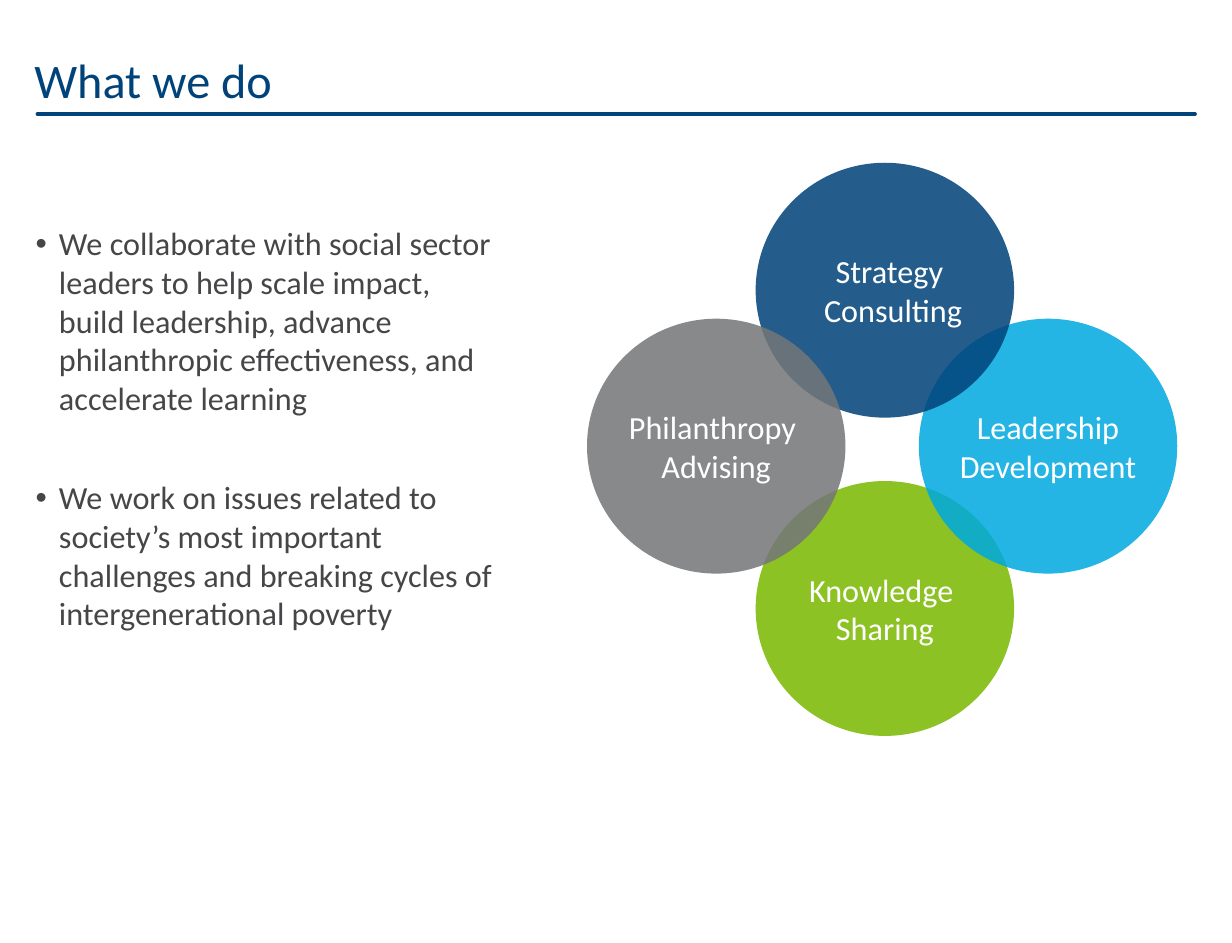
from dataclasses import dataclass

from lxml import etree
from pptx import Presentation
from pptx import util as u
from pptx.dml.color import RGBColor
from pptx.enum import shapes, text
from pptx.oxml.ns import qn

FONT = "Calibri"
NAVY = "00437A"
BODY_GREY = "464547"
WHITE = "FFFFFF"
CIRCLE_WIDTH, CIRCLE_HEIGHT = 5.67, 5.59


@dataclass
class Circle:
    left: float
    top: float
    color: str
    lines: list[str]
    margin: float = 0


CIRCLES = [
    Circle(16.58, 10.55, "7AB800", ["Knowledge ", "Sharing"]),
    Circle(20.16, 6.99, "00A9E0", ["Leadership", "Development"]),
    Circle(16.58, 3.57, NAVY, ["Strategy ", "Consulting"], 0.36),
    Circle(12.88, 6.99, "747678", ["Philanthropy ", "Advising"]),
]

BULLETS = [
    "We collaborate with social sector leaders to help scale impact, build leadership, "
    "advance philanthropic effectiveness, and accelerate learning",
    "We work on issues related to society’s most important challenges and breaking "
    "cycles of intergenerational poverty",
]


def rgb(value: str) -> RGBColor:
    return RGBColor.from_string(value)


def write(tf, lines: list[str], *, size: float, color: str, align=text.PP_ALIGN.LEFT,
          spacing: float = 1, gap: float = 0, margin: float = 0, indent: float = 0,
          bullet: str = "") -> None:
    for i, line in enumerate(lines):
        p = tf.paragraphs[0] if i == 0 else tf.add_paragraph()
        p.alignment = align
        p.line_spacing = spacing
        p.space_before = u.Pt(gap if i else 0)
        p_pr = p._p.get_or_add_pPr()
        p_pr.set("marL", str(u.Cm(margin)))
        p_pr.set("indent", str(u.Cm(indent)))
        if bullet:
            etree.SubElement(p_pr, qn("a:buFont"), typeface="Arial")
            etree.SubElement(p_pr, qn("a:buChar"), char=bullet)
        r = p.add_run()
        r.text = line
        r.font.name = FONT
        r.font.size = u.Pt(size)
        r.font.color.rgb = rgb(color)


def place(sp, left: float, top: float, width: float, height: float, anchor):
    sp.left, sp.top, sp.width, sp.height = map(u.Cm, (left, top, width, height))
    tf = sp.text_frame
    tf.auto_size = text.MSO_AUTO_SIZE.NONE
    tf.word_wrap = True
    tf.vertical_anchor = anchor
    return tf


def add_rule(s) -> None:
    rule = s.shapes.add_connector(shapes.MSO_CONNECTOR.STRAIGHT,
                                  u.Cm(0.82), u.Cm(2.5), u.Cm(26.22), u.Cm(2.5))
    rule.line.color.rgb = rgb(NAVY)
    rule.line.width = u.Pt(2.25)
    rule.line._get_or_add_ln().set("cap", "rnd")
    etree.SubElement(rule._element.spPr, qn("a:effectLst"))


def add_circle(s, circle: Circle) -> None:
    sp = s.shapes.add_shape(shapes.MSO_SHAPE.OVAL, u.Cm(circle.left), u.Cm(circle.top),
                            u.Cm(CIRCLE_WIDTH), u.Cm(CIRCLE_HEIGHT))
    sp.shadow.inherit = False
    sp.line.fill.background()
    sp.fill.solid()
    sp.fill.fore_color.rgb = rgb(circle.color)
    srgb = sp._element.spPr.find(qn("a:solidFill")).find(qn("a:srgbClr"))
    etree.SubElement(srgb, qn("a:alpha"), val="86000")
    tf = sp.text_frame
    tf.word_wrap = False
    tf.vertical_anchor = text.MSO_ANCHOR.MIDDLE
    write(tf, circle.lines, size=20, color=WHITE, align=text.PP_ALIGN.CENTER,
          margin=circle.margin)


def main() -> None:
    prs = Presentation()
    prs.slide_width, prs.slide_height = u.Cm(27.03), u.Cm(20.68)
    s = prs.slides.add_slide(prs.slide_layouts[1])
    add_rule(s)
    title, body = s.shapes.title, s.placeholders[1]
    tf = place(title, 0.5, 0, 25.78, 2.51, text.MSO_ANCHOR.BOTTOM)
    write(tf, ["What we do"], size=30, color=NAVY, spacing=0.9)
    tf = place(body, 0.53, 4.78, 10.65, 10.01, text.MSO_ANCHOR.TOP)
    write(tf, BULLETS, size=20, color=BODY_GREY, gap=37.8,
          margin=0.51, indent=-0.51, bullet="•")
    for circle in CIRCLES:
        add_circle(s, circle)
    prs.save("out.pptx")


if __name__ == "__main__":
    main()
